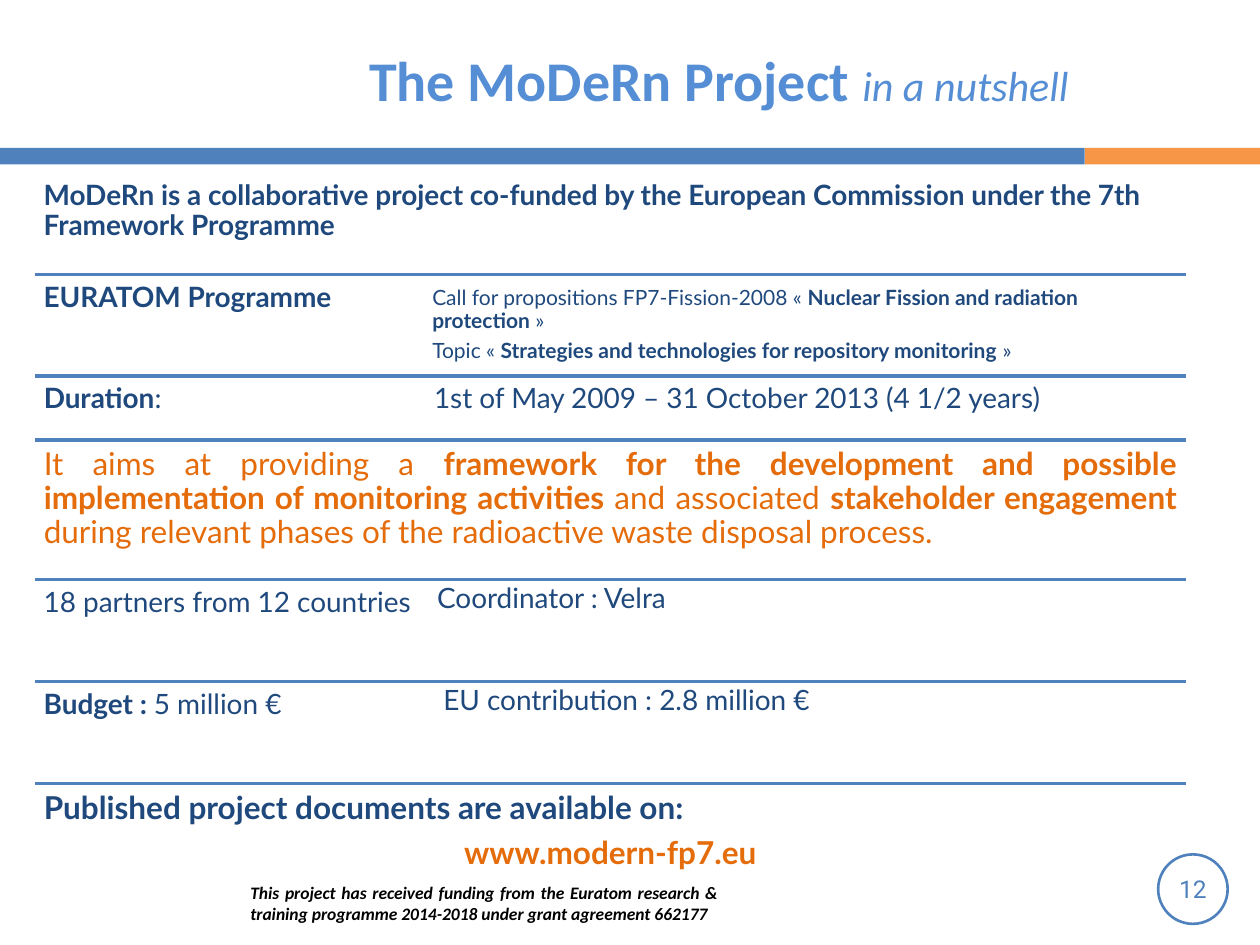
from lxml.etree import SubElement
from pptx import Presentation
from pptx.dml.color import RGBColor
from pptx.enum.shapes import MSO_CONNECTOR, MSO_SHAPE
from pptx.enum.text import MSO_ANCHOR as Anchor, PP_ALIGN as Align
from pptx.oxml.ns import qn
from pptx.util import Pt


class Theme:
    BLUE, ORANGE, TITLE = "4F81BD", "F79646", "558ED5"
    NAVY, ACCENT, BLACK = "1F497D", "E46C0A", "000000"
    HEAD, BODY, NUMBER = "Calibri", "Lato", "Roboto"
    TITLE_PT, SUBTITLE_PT, LARGE, NORMAL, SMALL, FOOT, PAGE = 32, 24, 18, 16, 12, 10, 14


T = Theme
LEFT, RIGHT = 20, 677.5
TAB_STOP = 223

# A paragraph is a list of (text, style) runs; the style holds "b" and/or "i".
TITLE = [[("The MoDeRn Project ", "b"), ("in a nutshell", "i")]]
FOOTER = [[("This project has received funding from the Euratom research & "
            "training programme 2014-2018 under grant agreement 662177", "bi")]]
PAGE_NUMBER = [[("12", "")]]

RULES = [157, 214.8, 251.3, 331.2, 389.5, 447.8]

# (left, top, width, height), paragraphs, format
BLOCKS = [
    ((LEFT, 98.6, 651, 58), [[
        ("MoDeRn is a collaborative project co-funded by the European Commission "
         "under the 7th Framework Programme", "b")]], {}),
    ((LEFT, RULES[0], 221, 58), [[("EURATOM Programme", "b")]], {}),
    ((243.4, 160.6, 423, 53), [
        [("Call for propositions FP7-Fission-2008 « ", ""),
         ("Nuclear Fission and radiation protection", "b"), (" »", "")],
        [("Topic « ", ""),
         ("Strategies and technologies for repository monitoring", "b"), (" »", "")],
    ], dict(size=T.SMALL, inset=3.6)),
    ((LEFT, RULES[1], 647, 58), [[
        ("Duration", "b"),
        (":\t1st of May 2009 – 31 October 2013 (4 1/2 years)", "")]],
     dict(tab=TAB_STOP)),
    ((LEFT, RULES[2], 657.5, 80), [[
        ("It aims at providing a ", ""),
        ("framework for the development and possible implementation of "
         "monitoring activities ", "b"),
        ("and associated ", ""), ("stakeholder engagement", "b"),
        (" during relevant phases of the radioactive waste disposal process.", "")]],
     dict(size=T.LARGE, color=T.ACCENT, aligns=[Align.JUSTIFY])),
    ((LEFT, RULES[3], 294, 58), [[("18 partners from 12 countries", "")]], {}),
    ((246.2, 330.5, 414, 53), [[("Coordinator : Velra", "")]], dict(inset=3.6)),
    ((LEFT, RULES[4], 188, 58), [[("Budget : ", "b"), ("5 million €", "")]], {}),
    ((248.4, 387.4, 418, 59), [[("EU contribution : 2.8 million €", "")]], {}),
    ((LEFT, RULES[5], 657.5, 58), [
        [("Published project documents are available on:", "b")],
        [("www.modern-fp7.eu", "b")],
    ], dict(size=T.LARGE, colors=[T.NAVY, T.ACCENT], aligns=[Align.LEFT, Align.CENTER])),
]


def rgb(value):
    return RGBColor.from_string(value)


def write(sp, paragraphs, size=T.NORMAL, sizes=None, color=T.NAVY, colors=None,
          font=T.BODY, aligns=(Align.LEFT,), anchor=Anchor.TOP, inset=5,
          inset_y=None, spacing=0.9, after=0.35, tab=None):
    """Fill a shape; sizes go by run, colors by paragraph, after is a share of size."""
    tf = sp.text_frame
    tf.word_wrap = True
    tf.vertical_anchor = anchor
    tf.margin_left = tf.margin_right = Pt(inset)
    tf.margin_top = tf.margin_bottom = Pt(inset if inset_y is None else inset_y)
    for i, runs in enumerate(paragraphs):
        p = tf.add_paragraph() if i else tf.paragraphs[0]
        if tab:
            tabs = SubElement(p._p.get_or_add_pPr(), qn("a:tabLst"))
            SubElement(tabs, qn("a:tab"), pos=str(Pt(tab)), algn="l")
        p.alignment = aligns[i % len(aligns)]
        p.line_spacing = spacing
        p.space_after = Pt(round(after * size, 1))
        for j, (text, style) in enumerate(runs):
            r = p.add_run()
            r.text = text
            f = r.font
            f.name = font
            f.size = Pt(sizes[j] if sizes else size)
            f.bold, f.italic = "b" in style, "i" in style
            f.color.rgb = rgb(colors[i] if colors else color)


def add_text(slide, box, paragraphs, **fmt):
    write(slide.shapes.add_textbox(*map(Pt, box)), paragraphs, **fmt)


def add_shape(slide, kind, box, fill=None, line=None):
    sp = slide.shapes.add_shape(kind, *map(Pt, box))
    sp.shadow.inherit = False
    if fill:
        sp.fill.solid()
        sp.fill.fore_color.rgb = rgb(fill)
    else:
        sp.fill.background()
    if line:
        sp.line.color.rgb = rgb(line)
        sp.line.width = Pt(1.5)
    else:
        sp.line.fill.background()
    return sp


def add_rule(slide, y):
    line = slide.shapes.add_connector(MSO_CONNECTOR.STRAIGHT, Pt(LEFT), Pt(y), Pt(RIGHT), Pt(y))
    line.line.color.rgb = rgb(T.BLUE)
    line.line.width = Pt(2)
    SubElement(line._element.spPr, qn("a:effectLst"))


def main():
    prs = Presentation()
    prs.slide_width, prs.slide_height = Pt(720), Pt(540)
    slide = prs.slides.add_slide(prs.slide_layouts[6])

    add_shape(slide, MSO_SHAPE.RECTANGLE, (619.9, 84.5, 100, 9.5), fill=T.ORANGE)
    add_shape(slide, MSO_SHAPE.RECTANGLE, (-1, 84.5, 620.9, 9.5), fill=T.BLUE)
    badge = add_shape(slide, MSO_SHAPE.OVAL, (661.8, 488.2, 39.7, 39.7), line=T.BLUE)
    plain = dict(anchor=Anchor.MIDDLE, spacing=1.0, after=0)
    write(badge, PAGE_NUMBER, size=T.PAGE, color=T.BLUE, font=T.NUMBER,
          aligns=[Align.CENTER], inset=0.7, **plain)
    add_text(slide, (136, 500, 281, 31.5), FOOTER, size=T.FOOT, color=T.BLACK,
             font=T.HEAD, aligns=[Align.JUSTIFY], inset=7.2, inset_y=3.6, **plain)
    add_text(slide, (161.3, 26, 499, 38), TITLE, sizes=[T.TITLE_PT, T.SUBTITLE_PT],
             color=T.TITLE, font=T.HEAD, aligns=[Align.CENTER], inset=7.2,
             inset_y=3.6, **plain)

    for y in RULES:
        add_rule(slide, y)
    for box, paragraphs, fmt in BLOCKS:
        add_text(slide, box, paragraphs, **fmt)

    prs.save("out.pptx")


if __name__ == "__main__":
    main()
